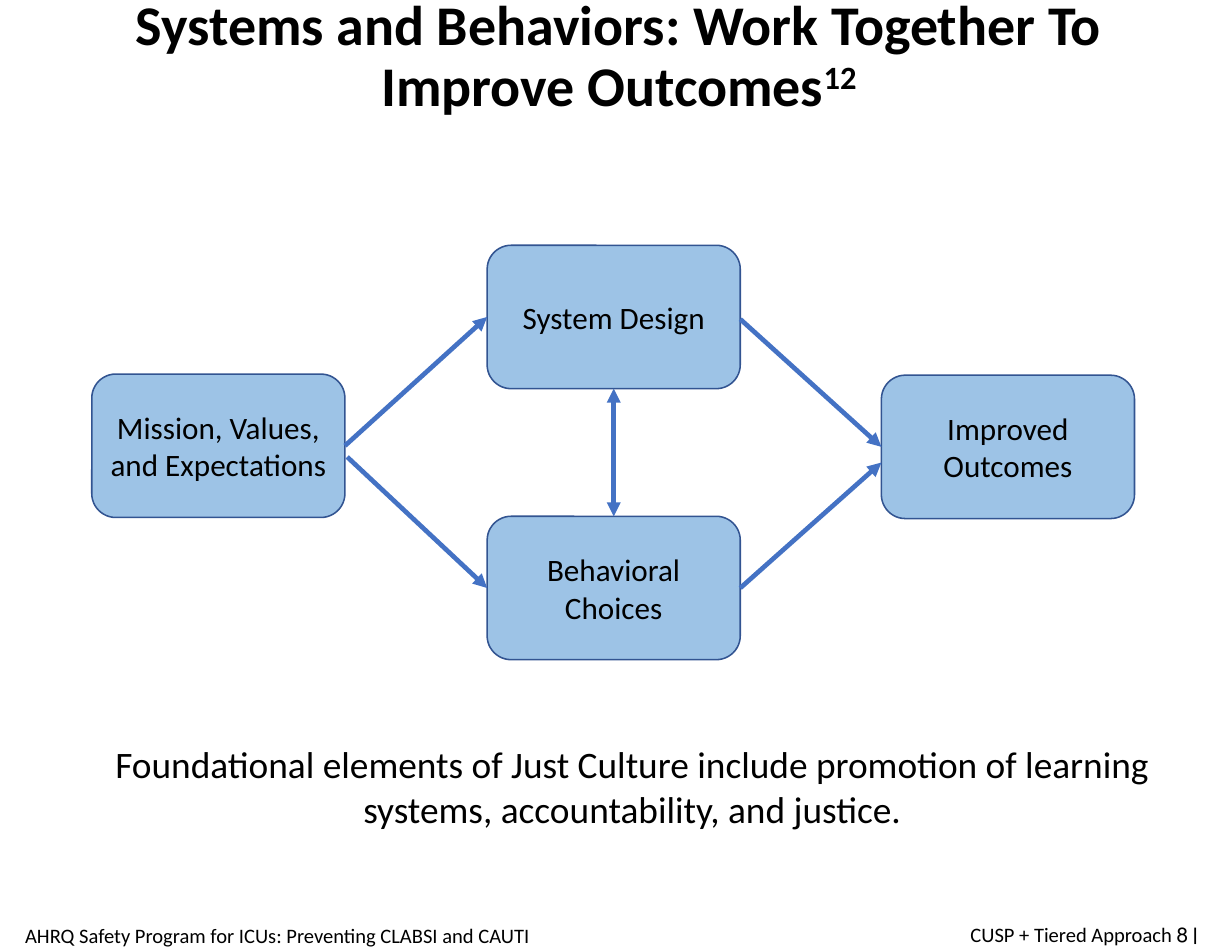
from lxml import etree
from pptx import Presentation
from pptx.dml.color import RGBColor
from pptx.enum.shapes import MSO_CONNECTOR as Connector, MSO_SHAPE as Shape
from pptx.enum.text import MSO_ANCHOR as Anchor, PP_ALIGN as Align
from pptx.oxml.ns import qn
from pptx.util import Inches, Pt

COLORS = {"text": "000000", "fill": "9DC3E6", "outline": "325491", "arrow": "4472C4"}
FONT = "Calibri"
BOX_WIDTH, BOX_HEIGHT = 2.26, 1.28

TITLE = "Systems and Behaviors: Work Together To Improve Outcomes"
REFERENCE = "12"
BOXES = [
    ("Mission, Values, and Expectations", 0.82, 3.34),
    ("System Design", 4.35, 2.19),
    ("Behavioral Choices", 4.35, 4.61),
    ("Improved Outcomes", 7.87, 3.35),
]
ARROWS = [
    ((5.48, 3.47), (5.48, 4.61), True),
    ((3.08, 3.98), (4.35, 2.83), False),
    ((3.1, 4.08), (4.35, 5.25), False),
    ((6.61, 2.85), (7.87, 3.99), False),
    ((6.61, 5.25), (7.87, 4.13), False),
]
TEXTS = [
    ("Foundational elements of Just Culture include promotion of learning systems, "
     "accountability, and justice.", (0.82, 6.57, 9.65, 0.91), 24, Align.CENTER, Anchor.TOP),
    ("AHRQ Safety Program for ICUs: Preventing CLABSI and CAUTI",
     (-0.17, 8.15, 5.29, 0.4), 13.2, Align.CENTER, Anchor.MIDDLE),
    ("CUSP + Tiered Approach ׀ 8",
     (8.32, 8.1, 2.47, 0.49), 13.2, Align.RIGHT, Anchor.MIDDLE),
]


def color(name):
    return RGBColor.from_string(COLORS[name])


def write(shape, text, size, align=Align.CENTER, anchor=Anchor.MIDDLE):
    frame = shape.text_frame
    frame.text = text
    frame.word_wrap = True
    frame.vertical_anchor = anchor
    para = frame.paragraphs[0]
    para.alignment = align
    style(para.runs[0], size)
    return para


def style(span, size, bold=False):
    span.font.name = FONT
    span.font.size = Pt(size)
    span.font.bold = bold
    span.font.color.rgb = color("text")


def add_text(page, text, place, *options):
    box = page.shapes.add_textbox(*map(Inches, place))
    return write(box, text, *options)


def add_title(page):
    para = add_text(page, TITLE, (0.92, 0.09, 9.21, 0.85), 36)
    para.line_spacing = 0.9
    para.add_run().text = REFERENCE
    for span in para.runs:
        style(span, 36, bold=True)
    para.runs[1].font._element.set("baseline", "30000")


def add_box(page, text, left, top):
    place = map(Inches, (left, top, BOX_WIDTH, BOX_HEIGHT))
    box = page.shapes.add_shape(Shape.ROUNDED_RECTANGLE, *place)
    box.shadow.inherit = False
    box.fill.solid()
    box.fill.fore_color.rgb = color("fill")
    box.line.color.rgb = color("outline")
    box.line.width = Pt(1)
    write(box, text, 20)


def add_arrow(page, start, end, both_ends):
    arrow = page.shapes.add_connector(Connector.STRAIGHT, *map(Inches, start + end))
    arrow.line.color.rgb = color("arrow")
    arrow.line.width = Pt(3)
    line = arrow.line._get_or_add_ln()
    for tag in ("a:headEnd", "a:tailEnd") if both_ends else ("a:tailEnd",):
        etree.SubElement(line, qn(tag), type="triangle")
    etree.SubElement(arrow._element.spPr, qn("a:effectLst"))


def main():
    deck = Presentation()
    deck.slide_width, deck.slide_height = Inches(11), Inches(8.5)
    page = deck.slides.add_slide(deck.slide_layouts[6])
    add_title(page)
    for box in BOXES:
        add_box(page, *box)
    for arrow in ARROWS:
        add_arrow(page, *arrow)
    for text in TEXTS:
        add_text(page, *text)
    deck.save("out.pptx")


if __name__ == "__main__":
    main()
